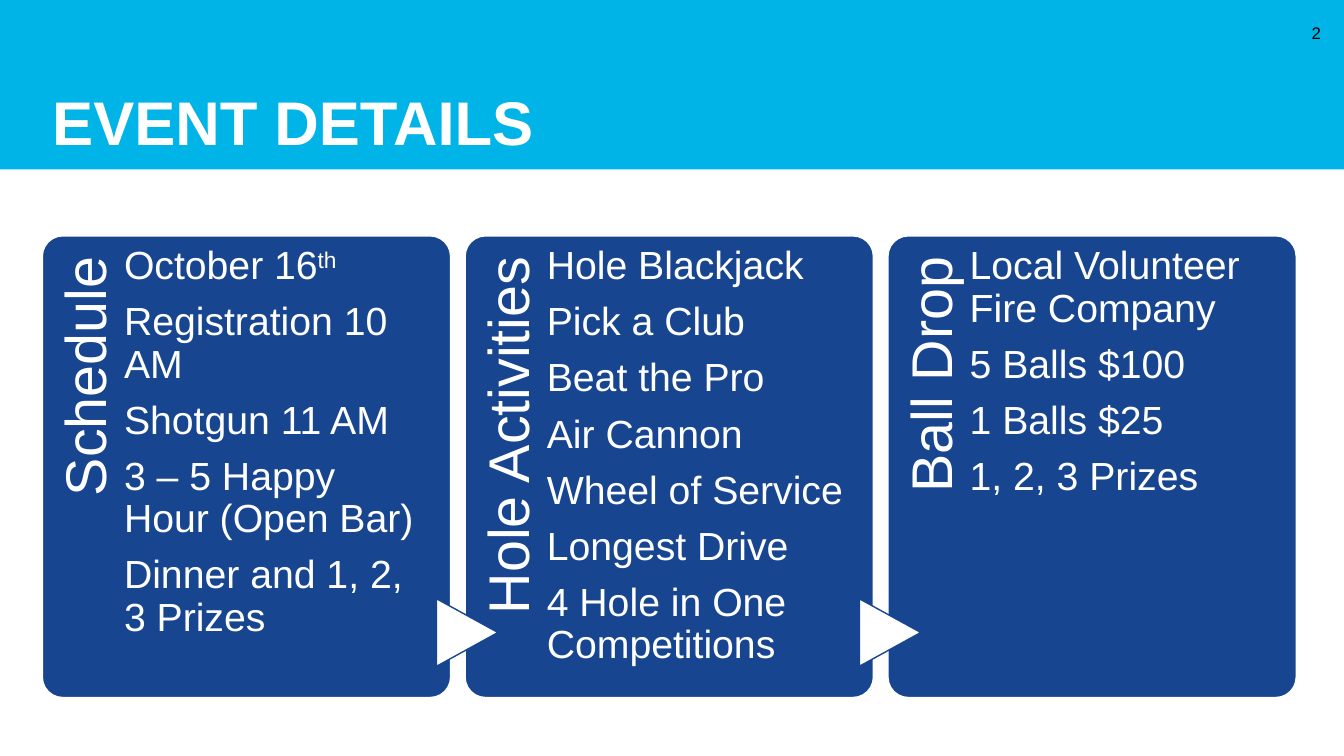
from pptx import Presentation
from pptx.dml.color import RGBColor
from pptx.enum.shapes import MSO_SHAPE
from pptx.enum.text import MSO_ANCHOR, PP_ALIGN
from pptx.util import Inches, Pt

SKY = RGBColor(0x01, 0xB4, 0xE7)
NAVY = RGBColor(0x17, 0x45, 0x8F)
WHITE = RGBColor(0xFF, 0xFF, 0xFF)
BLACK = RGBColor(0, 0, 0)

PANELS = [
    ("Schedule", ["October 16^th", "Registration 10 AM", "Shotgun 11 AM",
                  "3 – 5 Happy Hour (Open Bar)", "Dinner and 1, 2, 3 Prizes"]),
    ("Hole Activities", ["Hole Blackjack", "Pick a Club", "Beat the Pro", "Air Cannon",
                         "Wheel of Service", "Longest Drive", "4 Hole in One Competitions"]),
    ("Ball Drop", ["Local Volunteer Fire Company", "5 Balls $100", "1 Balls $25",
                   "1, 2, 3 Prizes"]),
]
LEFT, PITCH, TOP, HIGH = 3.15, 31.46, 31.2, 61.07


class Canvas:
    font = "Arial"

    def __init__(self, deck):
        self.wide, self.high = deck.slide_width, deck.slide_height
        self.shapes = deck.slides.add_slide(deck.slide_layouts[6]).shapes

    def area(self, x, y, w, h):
        return (round(self.wide * x / 100), round(self.high * y / 100),
                round(self.wide * w / 100), round(self.high * h / 100))

    def shape(self, kind, box, fill, line=None, turn=0):
        shape = self.shapes.add_shape(kind, *self.area(*box))
        shape.shadow.inherit = False
        shape.rotation = turn
        shape.fill.solid()
        shape.fill.fore_color.rgb = fill
        if line is None:
            shape.line.fill.background()
        else:
            shape.line.color.rgb = line
            shape.line.width = Pt(1)
        return shape

    def text(self, box, lines, size, color=WHITE, bold=False, align=PP_ALIGN.LEFT,
             anchor=MSO_ANCHOR.TOP, inset=(0, 0, 0, 0), lead=0.9, after=0, turn=0):
        shape = self.shapes.add_textbox(*self.area(*box))
        shape.rotation = turn
        frame = shape.text_frame
        frame.word_wrap = True
        frame.vertical_anchor = anchor
        (frame.margin_left, frame.margin_top,
         frame.margin_right, frame.margin_bottom) = map(Inches, inset)
        for i, line in enumerate(lines):
            para = frame.add_paragraph() if i else frame.paragraphs[0]
            para.alignment = align
            para.line_spacing = lead
            para.space_after = Pt(after)
            font = para.font
            font.name, font.size, font.bold = self.font, Pt(size), bold
            font.color.rgb = color
            base, _, power = line.partition("^")
            para.add_run().text = base
            if power:
                run = para.add_run()
                run.text = power
                run.font._element.set("baseline", "30000")

    def panel(self, col, label, items):
        x = LEFT + col * PITCH
        card = self.shape(MSO_SHAPE.ROUNDED_RECTANGLE, (x, TOP, 30.38, HIGH), NAVY, WHITE)
        card.adjustments[0] = 0.05
        self.text((x - 11.1, 50.93, 28.2, 10.8), [label], 41, align=PP_ALIGN.RIGHT,
                  inset=(0, 0.15, 0.2, 0), turn=270)
        if col:
            self.shape(MSO_SHAPE.FLOWCHART_EXTRACT, (x - 2.36, 79.6, 5.03, 8.13),
                       WHITE, NAVY, 90)
        self.text((x + 6.08, TOP, 22.66, HIGH), items, 28, inset=(0, 0.1, 0, 0), after=9.8)


def main():
    deck = Presentation()
    deck.slide_width, deck.slide_height = Inches(13.33), Inches(7.5)
    page = Canvas(deck)
    page.shape(MSO_SHAPE.RECTANGLE, (0, 0, 100, 22.4), SKY)
    page.text((LEFT, 0, 94.37, 22.4), ["EVENT DETAILS"], 44, bold=True,
              anchor=MSO_ANCHOR.BOTTOM, inset=(0.1, 0, 0.1, 0.1))
    for col, (label, items) in enumerate(PANELS):
        page.panel(col, label, items)
    page.text((95.57, 1.73, 3.45, 5.33), ["2"], 12, BLACK, align=PP_ALIGN.RIGHT,
              anchor=MSO_ANCHOR.MIDDLE, inset=(0.1, 0.05, 0.1, 0.05), lead=1)
    deck.save("out.pptx")


if __name__ == "__main__":
    main()
